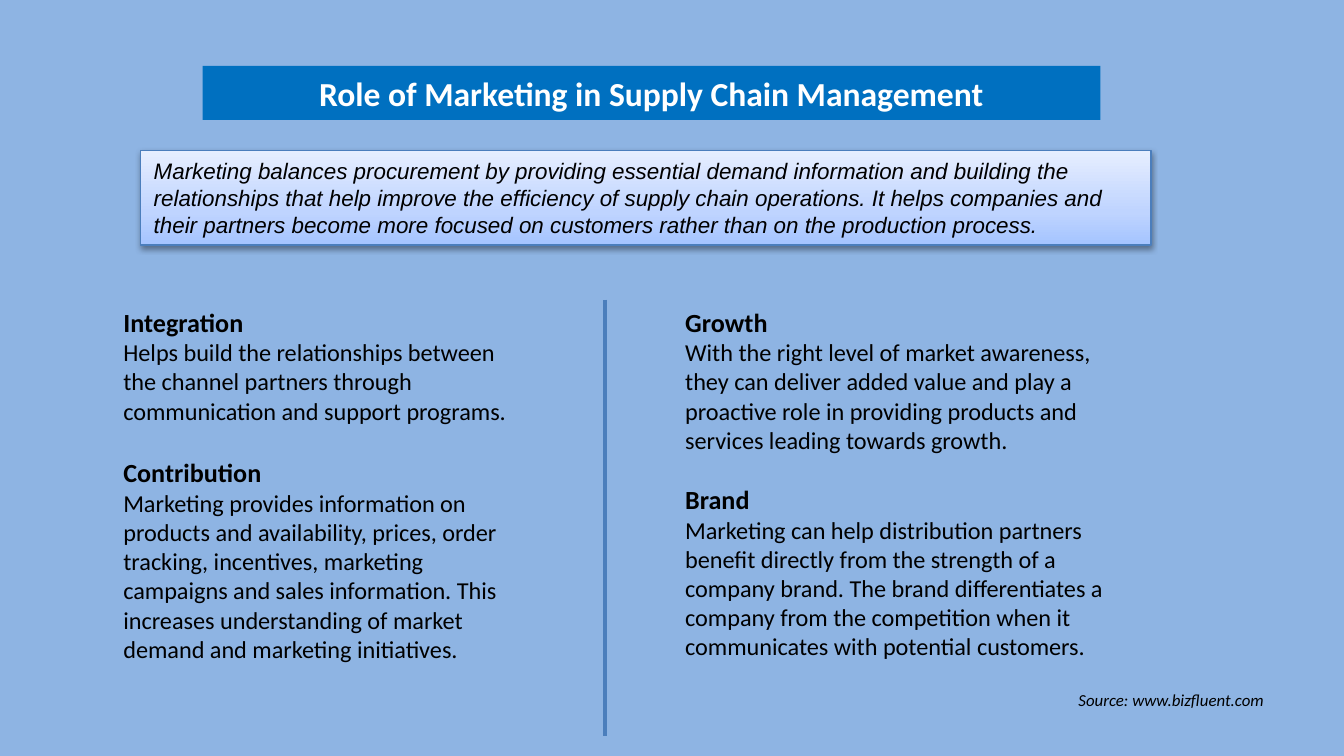
import pptx
import pptx.util
import pptx.dml.color
import pptx.enum.shapes
import pptx.enum.text
import pptx.oxml
import pptx.oxml.ns

Pt = pptx.util.Pt
Kind = pptx.enum.shapes.MSO_SHAPE
Align = pptx.enum.text.PP_ALIGN
qn = pptx.oxml.ns.qn
NS = pptx.oxml.ns.nsdecls("a")

TITLE = "Role of Marketing in Supply Chain Management"
INTRO = (
    "Marketing balances procurement by providing essential demand information "
    "and building the relationships that help improve the efficiency of supply "
    "chain operations. It helps companies and their partners become more focused "
    "on customers rather than on the production process."
)
SOURCE = "Source: www.bizfluent.com"
COLUMNS = [
    {
        "box": (59, 160.5, 228.5, 200),
        "gap": 17,
        "parts": [
            ("Integration",
             "Helps build the relationships between the channel partners through "
             "communication and support programs."),
            ("Contribution",
             "Marketing provides information on products and availability, prices, "
             "order tracking, incentives, marketing campaigns and sales information. "
             "This increases understanding of market demand and marketing initiatives."),
        ],
    },
    {
        "box": (360, 160.5, 252.5, 199),
        "gap": 15.8,
        "parts": [
            ("Growth",
             "With the right level of market awareness, they can deliver added value "
             "and play a proactive role in providing products and services leading "
             "towards growth."),
            ("Brand",
             "Marketing can help distribution partners benefit directly from the "
             "strength of a company brand. The brand differentiates a company from "
             "the competition when it communicates with potential customers."),
        ],
    },
]
STOPS = [(0, "A4C4FF"), (35, "BFD4FF"), (100, "E6EEFF")]
EDGE = "4B7EBC"


def color(text):
    return pptx.dml.color.RGBColor.from_string(text)


def write(para, text, size, tint="000000", face="Calibri", bold=False,
          slant=False, align=Align.LEFT):
    para.text = text
    para.alignment = align
    font = para.runs[0].font
    font.name, font.size = face, Pt(size)
    font.bold, font.italic = bold, slant
    font.color.rgb = color(tint)


def setup(shape):
    frame = shape.text_frame
    frame.word_wrap = True
    frame.auto_size = pptx.enum.text.MSO_AUTO_SIZE.SHAPE_TO_FIT_TEXT
    frame.vertical_anchor = pptx.enum.text.MSO_ANCHOR.TOP
    return frame


def add_rect(*box):
    shape = slide.shapes.add_shape(Kind.RECTANGLE, *map(Pt, box))
    shape.shadow.inherit = False
    return shape, setup(shape)


def add_text(*box):
    return setup(slide.shapes.add_textbox(*map(Pt, box)))


deck = pptx.Presentation()
deck.slide_width, deck.slide_height = Pt(720), Pt(405)
slide = deck.slides.add_slide(deck.slide_layouts[6])
slide.background.fill.solid()
slide.background.fill.fore_color.rgb = color("8EB4E3")

banner, frame = add_rect(108.5, 35.25, 481, 29)
banner.fill.solid()
banner.fill.fore_color.rgb = color("0070C0")
banner.line.fill.background()
write(frame.paragraphs[0], TITLE, 18, "FFFFFF", bold=True, align=Align.CENTER)

panel, frame = add_rect(75.3, 80.6, 541.3, 50.8)
panel.fill.gradient()
panel.fill.gradient_angle = 90
panel.line.color.rgb = color(EDGE)
panel.line.width = Pt(0.75)
props = panel.element.spPr
stops = props.find(".//" + qn("a:gsLst"))
for stop in list(stops):
    stops.remove(stop)
for pos, tint in STOPS:
    stops.append(pptx.oxml.parse_xml(
        f'<a:gs {NS} pos="{pos * 1000}"><a:srgbClr val="{tint}"/></a:gs>'))
props.find(qn("a:effectLst")).append(pptx.oxml.parse_xml(
    f'<a:outerShdw {NS} blurRad="{Pt(3.1)}" dist="{Pt(1.6)}" dir="5400000" '
    'rotWithShape="0"><a:srgbClr val="000000"><a:alpha val="38000"/>'
    '</a:srgbClr></a:outerShdw>'))
write(frame.paragraphs[0], INTRO, 12, face="Arial", slant=True)

for column in COLUMNS:
    frame = add_text(*column["box"])
    for index, (head, body) in enumerate(column["parts"]):
        para = frame.add_paragraph() if index else frame.paragraphs[0]
        write(para, head, 14, bold=True)
        if index:
            para.space_before = Pt(column["gap"])
        write(frame.add_paragraph(), body, 13)

rule = slide.shapes.add_connector(
    pptx.enum.shapes.MSO_CONNECTOR.STRAIGHT, *map(Pt, (324, 160.5, 324, 394.5)))
rule.line.color.rgb = color(EDGE)
rule.line.width = Pt(2.25)
rule.element.spPr.append(pptx.oxml.parse_xml(f"<a:effectLst {NS}/>"))

frame = add_text(384, 366, 300, 18)
write(frame.paragraphs[0], SOURCE, 9, slant=True, align=Align.RIGHT)

deck.save("out.pptx")
